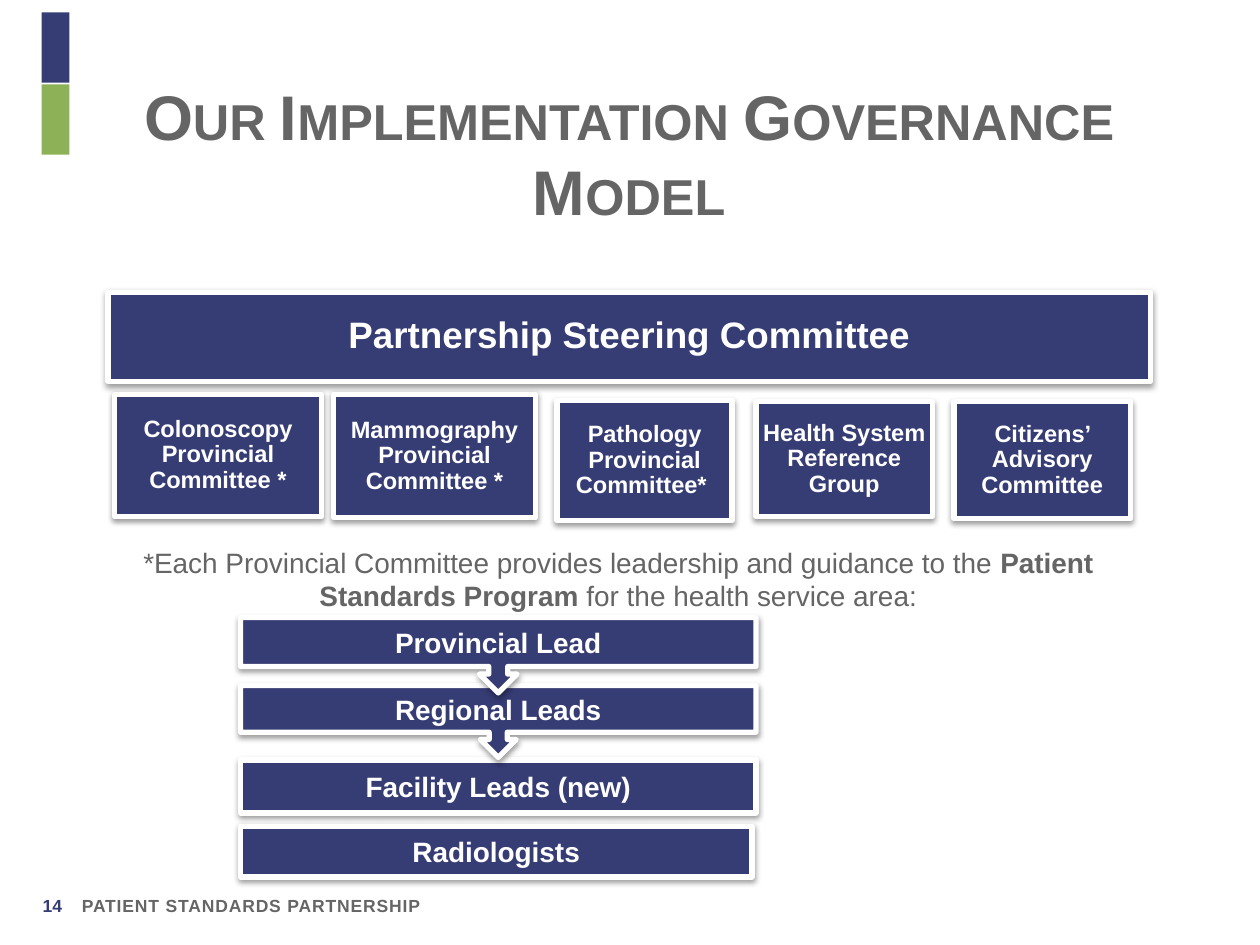
from lxml import etree
from pptx import Presentation
from pptx.dml.color import RGBColor
from pptx.enum import shapes, text
from pptx.oxml.ns import qn
from pptx.util import Cm, Pt

NAVY = RGBColor(0x36, 0x3C, 0x74)
GREEN = RGBColor(0x8D, 0xB1, 0x57)
GREY = RGBColor(0x65, 0x65, 0x65)
WHITE = RGBColor(0xFF, 0xFF, 0xFF)

RECTANGLE = shapes.MSO_SHAPE.RECTANGLE
CALLOUT = shapes.MSO_SHAPE.DOWN_ARROW_CALLOUT
CENTER = text.PP_ALIGN.CENTER
MIDDLE = text.MSO_ANCHOR.MIDDLE

COMMITTEES = [
    ("Colonoscopy Provincial Committee *", 0.13, 0, 4.17, 2.46),
    ("Mammography Provincial Committee *", 4.55, 0, 4.06, 2.49),
    ("Pathology Provincial Committee* ", 9.05, 0.13, 3.53, 2.41),
    ("Health System Reference Group", 13.06, 0.15, 3.56, 2.31),
    ("Citizens’ Advisory Committee", 17.05, 0.15, 3.56, 2.36),
]
LEADS = [
    ("Provincial Lead", CALLOUT, 0, 10.39, 1.52),
    ("Regional Leads", CALLOUT, 1.37, 10.39, 1.45),
    ("Facility Leads (new)", RECTANGLE, 2.87, 10.39, 1.07),
    ("Radiologists", RECTANGLE, 4.21, 10.31, 1.02),
]


def apply(target, values):
    for name, value in values.items():
        setattr(target, name, value)


def write(shape, spans, size, color, frame_format=None, para_format=None):
    frame = shape.text_frame
    apply(frame, {"word_wrap": True, **(frame_format or {})})
    para = frame.paragraphs[0]
    apply(para, para_format or {})
    for content, bold in spans:
        span = para.add_run()
        span.text = content
        apply(span.font, {"name": "Arial", "size": Pt(size), "bold": bold})
        span.font.color.rgb = color
    return para


def add_text(page, box, spans, size, color, **formats):
    shape = page.shapes.add_textbox(*map(Cm, box))
    return write(shape, spans, size, color, **formats)


def add_block(page, kind, box, color):
    shape = page.shapes.add_shape(kind, *map(Cm, box))
    shape.shadow.inherit = False
    shape.fill.solid()
    shape.fill.fore_color.rgb = color
    shape.line.fill.background()
    return shape


def add_shadow(shape):
    effects = shape._element.spPr.find(qn("a:effectLst"))
    shadow = etree.SubElement(effects, qn("a:outerShdw"), blurRad="40000",
                              dist="20000", dir="5400000", rotWithShape="0")
    color = etree.SubElement(shadow, qn("a:srgbClr"), val="000000")
    etree.SubElement(color, qn("a:alpha"), val="38000")


def add_card(page, kind, box, label, size, inset=None, para_format=None):
    card = add_block(page, kind, box, NAVY)
    card.line.color.rgb = WHITE
    card.line.width = Pt(3)
    add_shadow(card)
    frame_format = {"vertical_anchor": MIDDLE}
    if inset is not None:
        for side in ("left", "top", "right", "bottom"):
            frame_format[f"margin_{side}"] = Cm(inset)
    write(card, [(label, True)], size, WHITE, frame_format,
          {"alignment": CENTER, **(para_format or {})})


def draw_header(page, left, top):
    for row, color in enumerate((NAVY, GREEN)):
        add_block(page, RECTANGLE, (left, top + row * 1.45, 0.56, 1.42), color)
    para = add_text(page, (left + 1.34, top + 2.42, 21.01, 2.06),
                    [("Our Implementation Governance Model", True)], 36, GREY,
                    frame_format={"vertical_anchor": text.MSO_ANCHOR.BOTTOM},
                    para_format={"alignment": CENTER})
    para.runs[0].font._element.set("cap", "small")


def draw_committees(page, left, top):
    tight = {"line_spacing": 0.9}
    add_card(page, RECTANGLE, (left, top, 21.01, 1.8),
             "Partnership Steering Committee", 21, 0.13, tight)
    for label, dx, dy, width, height in COMMITTEES:
        add_card(page, RECTANGLE, (left + dx, top + 2.06 + dy, width, height),
                 label, 13.5, 0.1, tight)


def draw_note(page, left, top):
    spans = [
        ("*Each Provincial Committee provides leadership and guidance to the ", False),
        ("Patient Standards Program ", True),
        ("for the health service area:", False),
    ]
    add_text(page, (left, top, 19.69, 1.63), spans, 16, GREY,
             para_format={"alignment": CENTER})


def draw_leads(page, left, top):
    for label, kind, dy, width, height in reversed(LEADS):
        add_card(page, kind, (left, top + dy, width, height), label, 16)


def draw_footer(page, left, top):
    add_text(page, (left, top, 0.99, 0.69), [("14", True)], 10, NAVY)
    para = add_text(page, (left + 0.79, top, 22.9, 0.69),
                    [("PATIENT STANDARDS PARTNERSHIP", True)], 10, GREY)
    para.runs[0].font._element.set("spc", "50")


def main():
    deck = Presentation()
    apply(deck, {"slide_width": Cm(25.4), "slide_height": Cm(19.05)})
    page = deck.slides.add_slide(deck.slide_layouts[6])
    draw_header(page, 0.84, 0.25)
    draw_committees(page, 2.18, 5.89)
    draw_note(page, 2.62, 10.87)
    draw_leads(page, 4.85, 12.45)
    draw_footer(page, 0.61, 17.91)
    deck.save("out.pptx")


if __name__ == "__main__":
    main()
